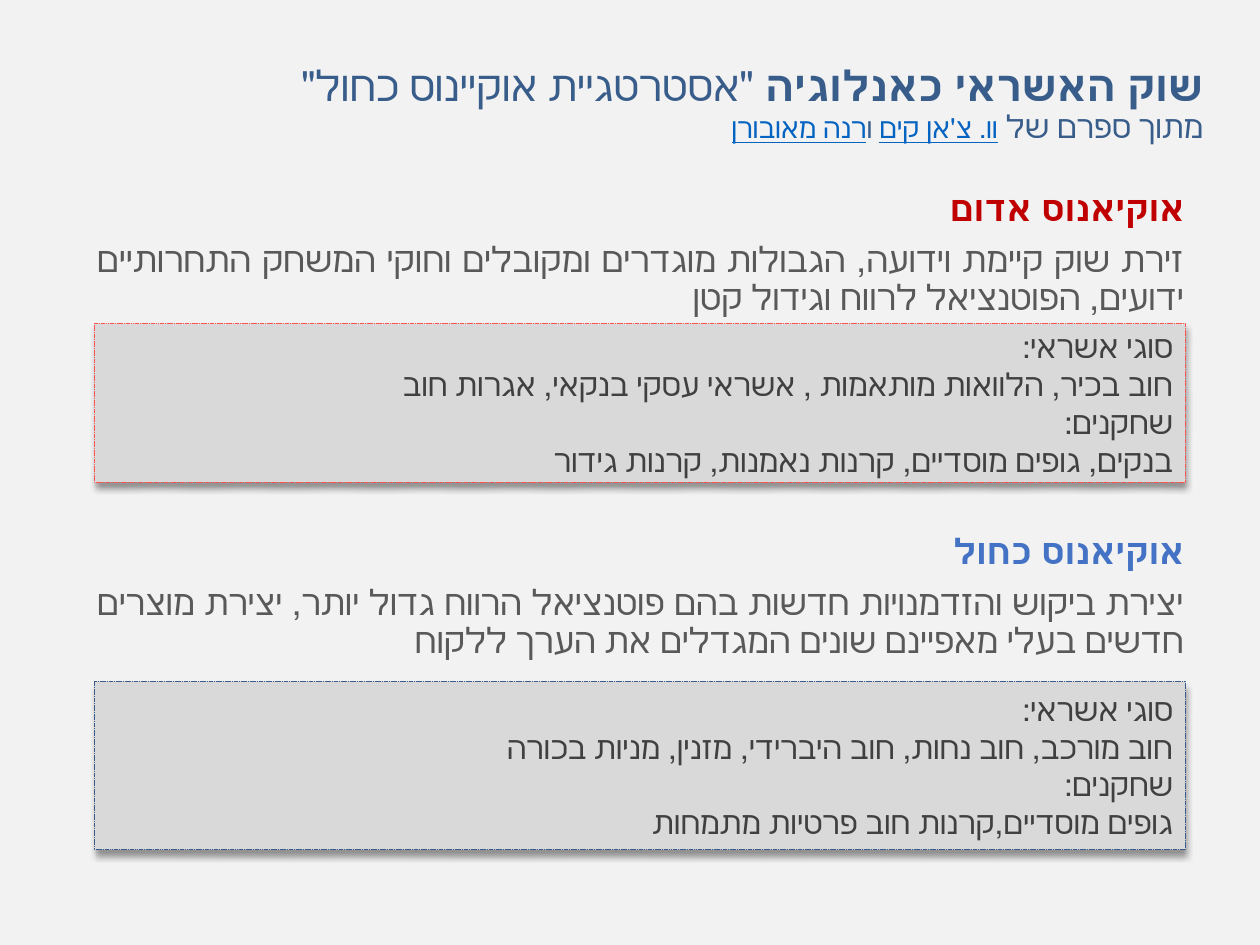
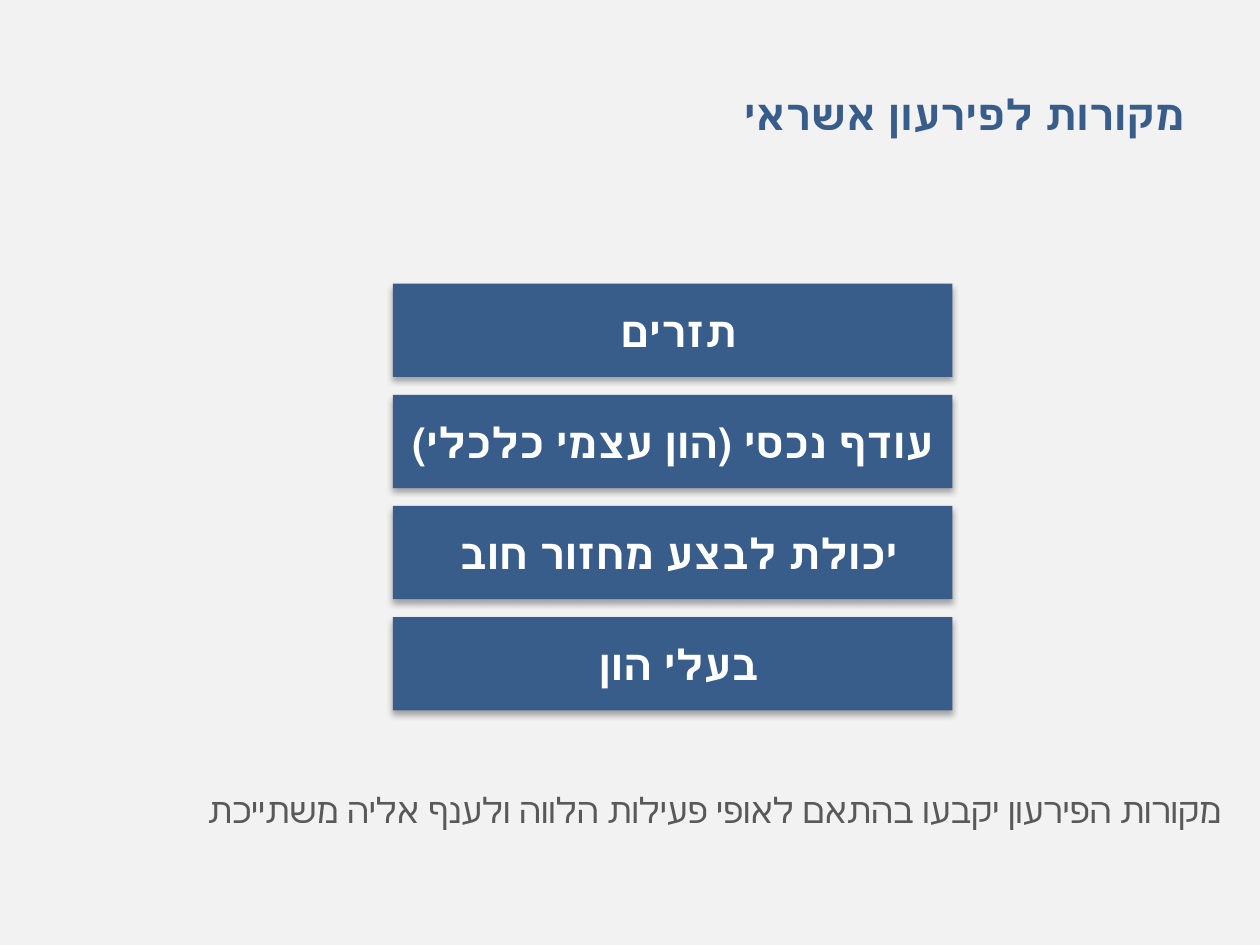
"""Build two right-to-left slides on ocean strategy and sources of credit repayment."""
from copy import deepcopy
from dataclasses import dataclass

from lxml.etree import SubElement
from pptx import Presentation
from pptx.dml.color import RGBColor
from pptx.enum.dml import MSO_LINE
from pptx.enum.shapes import MSO_SHAPE
from pptx.enum.text import MSO_ANCHOR as Anchor, MSO_AUTO_SIZE as AutoSize, PP_ALIGN as Align
from pptx.oxml.ns import qn
from pptx.util import Cm, Pt


@dataclass(frozen=True)
class Theme:
    background: str = "F2F2F2"
    navy: str = "385D8A"
    red: str = "C00000"
    blue: str = "4472C4"
    link: str = "0563C1"
    body: str = "595959"
    panel: str = "D9D9D9"
    panel_text: str = "404040"
    panel_red: str = "FF5353"
    white: str = "FFFFFF"
    font: str = "Cabin"
    bar_font: str = "Karla"
    title_size: int = 24
    body_size: int = 20
    panel_size: int = 18
    name_size: int = 16


THEME = Theme()

NAME = dict(bold=False, size=THEME.name_size, color=THEME.link, underline=True)
OCEAN_TITLE = [
    ("שוק האשראי כאנלוגיה ", {}),
    ("\"אסטרטגיית אוקיינוס כחול\"", dict(bold=False)),
    ("\n", {}),
    ("מתוך ספרם של ", dict(bold=False, size=THEME.panel_size)),
    ("וו. צ'אן קים", NAME),
    (" ו", dict(bold=False, size=THEME.name_size)),
    ("רנה מאובורן", NAME),
]
OCEANS = [
    dict(heading="אוקיאנוס אדום", color=THEME.red, before=0,
         summary="זירת שוק קיימת וידועה, הגבולות מוגדרים ומקובלים וחוקי המשחק "
                 "התחרותיים ידועים, הפוטנציאל לרווח וגידול קטן",
         top=6.52, height=3.2, edge=THEME.panel_red,
         details=["סוגי אשראי:",
                  "חוב בכיר, הלוואות מותאמות , אשראי עסקי בנקאי, אגרות חוב",
                  "שחקנים:",
                  "בנקים, גופים מוסדיים, קרנות נאמנות, קרנות גידור"]),
    dict(heading="אוקיאנוס כחול", color=THEME.blue, before=123.5,
         summary="יצירת ביקוש והזדמנויות חדשות בהם פוטנציאל הרווח גדול יותר, "
                 "יצירת מוצרים חדשים בעלי מאפיינם שונים המגדלים את הערך ללקוח",
         top=13.73, height=3.4, edge=THEME.navy,
         details=["סוגי אשראי:",
                  "חוב מורכב, חוב נחות, חוב היברידי, מזנין, מניות בכורה",
                  "שחקנים:",
                  "גופים מוסדיים,קרנות חוב פרטיות מתמחות"]),
]
REPAYMENT_TITLE = "מקורות לפירעון אשראי"
SOURCES = ["תזרים ", "עודף נכסי (הון עצמי כלכלי)", "יכולת לבצע מחזור חוב ", "בעלי הון "]
REPAYMENT_NOTE = "מקורות הפירעון יקבעו בהתאם לאופי פעילות הלווה ולענף אליה משתייכת"

PANEL_LEFT, PANEL_WIDTH = 1.9, 22
BAR_LEFT, BAR_TOP, BAR_WIDTH, BAR_HEIGHT, BAR_PITCH = 7.92, 5.72, 11.28, 1.88, 2.24


def format_span(span, size, color, font, bold, underline):
    span.font.name, span.font.size = font, Pt(size)
    span.font.bold, span.font.underline = bold, underline
    span.font.color.rgb = RGBColor.from_string(color)


def add_text(frame, text, *, size=THEME.body_size, color=THEME.body, font=THEME.font,
             bold=False, underline=False, align=Align.RIGHT, spacing=1.0, before=0):
    para = frame.paragraphs[0]
    if para.runs:
        para = frame.add_paragraph()
    properties = para._p.get_or_add_pPr()
    for key, value in dict(marL="0", marR="0", indent="0", rtl="1").items():
        properties.set(key, value)
    SubElement(properties, qn("a:buNone"))
    para.alignment, para.line_spacing, para.space_before = align, spacing, Pt(before)
    base = dict(size=size, color=color, font=font, bold=bold, underline=underline)
    for words, changes in [(text, {})] if isinstance(text, str) else text:
        if words == "\n":
            look = deepcopy(para.runs[-1]._r.rPr)
            para.add_line_break()
            para._p[-1].append(look)
            continue
        span = para.add_run()
        span.text = words
        format_span(span, **{**base, **changes})


def place(shape, left, top, width, height):
    shape.left, shape.top, shape.width, shape.height = map(Cm, (left, top, width, height))
    shape.text_frame.word_wrap = True
    shape.text_frame.auto_size = AutoSize.NONE
    return shape.text_frame


def add_page(deck, title, title_at, body_at):
    page = deck.slides.add_slide(deck.slide_layouts[1])
    frame = place(page.shapes.title, *title_at)
    frame.vertical_anchor = Anchor.MIDDLE
    add_text(frame, title, size=THEME.title_size, color=THEME.navy, bold=True, spacing=0.9)
    return page, place(page.placeholders[1], *body_at)


def add_box(page, at, fill, *, edge=None, blur=4, distance=3, opacity=40):
    box = page.shapes.add_shape(MSO_SHAPE.RECTANGLE, *map(Cm, at))
    box.fill.solid()
    box.fill.fore_color.rgb = RGBColor.from_string(fill)
    if edge:
        box.line.color.rgb = RGBColor.from_string(edge)
        box.line.width = Pt(0.25)
        box.line.dash_style = MSO_LINE.SQUARE_DOT
    else:
        box.line.fill.background()
    box.shadow.inherit = False
    effects = box._element.spPr.find(qn("a:effectLst"))
    shadow = SubElement(effects, qn("a:outerShdw"), blurRad=str(Pt(blur)),
                        dist=str(Pt(distance)), dir="5400000", algn="t", rotWithShape="0")
    tint = SubElement(shadow, qn("a:srgbClr"), val="000000")
    SubElement(tint, qn("a:alpha"), val=str(opacity * 1000))
    box.text_frame.word_wrap = True
    box.text_frame.vertical_anchor = Anchor.MIDDLE
    return box.text_frame


def build_oceans(deck):
    page, body = add_page(deck, OCEAN_TITLE, (3.71, 0.53, 20.8, 3.18), (1.7, 3.73, 22.43, 13.79))
    for ocean in OCEANS:
        add_text(body, ocean["heading"], color=ocean["color"], bold=True,
                 spacing=0.9, before=ocean["before"])
        add_text(body, ocean["summary"], align=Align.JUSTIFY, spacing=0.9, before=7.5)
        panel = add_box(page, (PANEL_LEFT, ocean["top"], PANEL_WIDTH, ocean["height"]),
                        THEME.panel, edge=ocean["edge"])
        for detail in ocean["details"]:
            add_text(panel, detail, size=THEME.panel_size, color=THEME.panel_text)


def build_repayment(deck):
    page, body = add_page(deck, REPAYMENT_TITLE, (1.27, 0.76, 22.86, 3.18),
                          (1.27, 3.53, 23.62, 13.49))
    body.vertical_anchor = Anchor.BOTTOM
    body.margin_bottom = Cm(0.28)
    add_text(body, REPAYMENT_NOTE, spacing=0.8)
    for index, source in enumerate(SOURCES):
        bar = add_box(page, (BAR_LEFT, BAR_TOP + index * BAR_PITCH, BAR_WIDTH, BAR_HEIGHT),
                      THEME.navy, blur=3.5, distance=2.2, opacity=32)
        bar.word_wrap = False
        add_text(bar, source, size=THEME.title_size, color=THEME.white,
                 font=THEME.bar_font, bold=True, align=Align.CENTER)


def main():
    deck = Presentation()
    deck.slide_width, deck.slide_height = Cm(25.4), Cm(19.05)
    backdrop = deck.slide_master.background.fill
    backdrop.solid()
    backdrop.fore_color.rgb = RGBColor.from_string(THEME.background)
    build_oceans(deck)
    build_repayment(deck)
    deck.save("out.pptx")


if __name__ == "__main__":
    main()
